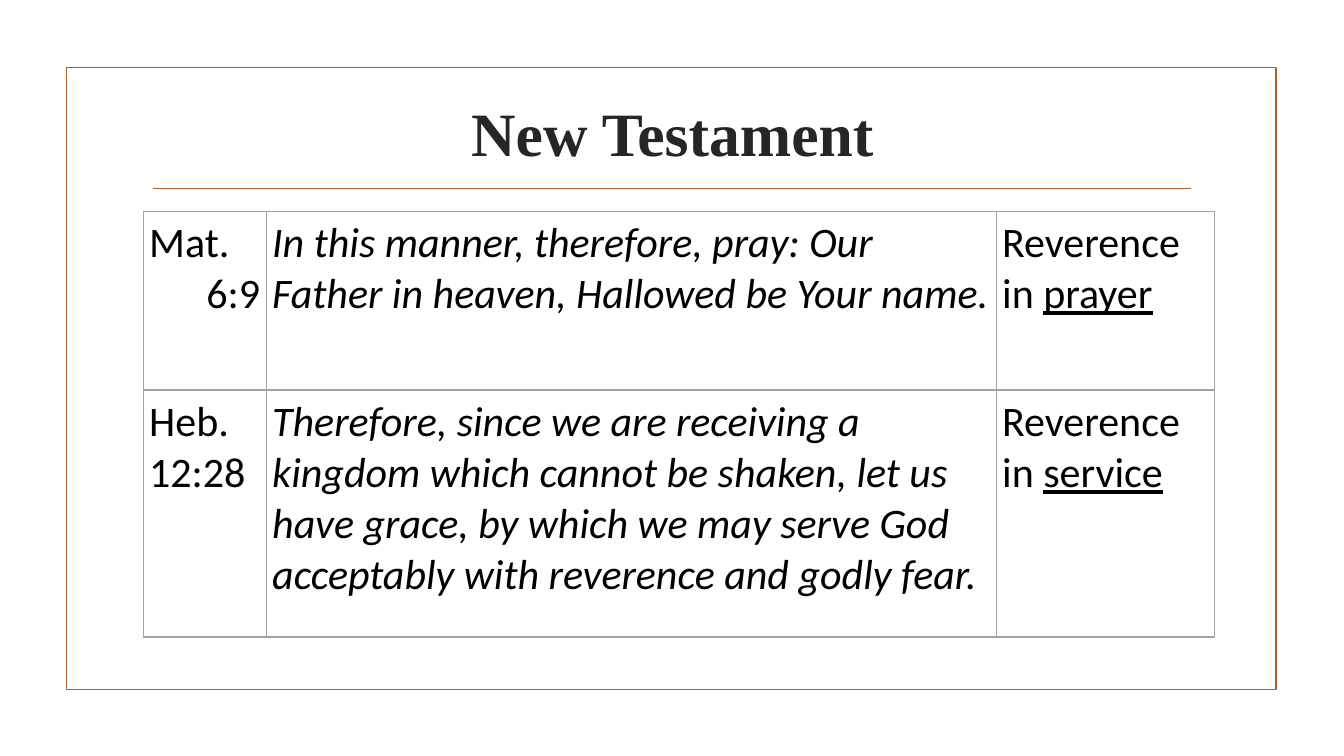
from dataclasses import dataclass

from lxml.etree import SubElement
from pptx import Presentation
from pptx.dml.color import RGBColor
from pptx.enum.shapes import MSO_CONNECTOR as Connector, MSO_SHAPE as Shape
from pptx.enum.text import MSO_ANCHOR as Anchor, PP_ALIGN as Align
from pptx.oxml.ns import qn
from pptx.util import Inches, Pt


@dataclass(frozen=True)
class Theme:
    accent: str = "B15E28"
    heading: str = "262626"
    ink: str = "000000"
    grid: str = "A3A3A3"
    heading_font: str = "Times New Roman"
    body_font: str = "Calibri"
    heading_size: float = 44
    body_size: float = 30
    rule_width: float = 1.25
    grid_width: float = 1
    cell_inset: float = 0.06


class VerseSlide:
    def __init__(self, slide, theme):
        self.shapes = slide.shapes
        self.theme = theme

    def stroke(self, line):
        line.color.rgb = RGBColor.from_string(self.theme.accent)
        line.width = Pt(self.theme.rule_width)

    def add_text(self, paragraph, text, color, **formats):
        run = paragraph.add_run()
        run.text = text
        for name, value in formats.items():
            setattr(run.font, name, value)
        run.font.color.rgb = RGBColor.from_string(color)

    def frame(self, left, top, width, height):
        border = self.shapes.add_shape(
            Shape.RECTANGLE, *map(Inches, (left, top, width, height)))
        border.shadow.inherit = False
        border.fill.background()
        self.stroke(border.line)

    def rule(self, left, right, y):
        divider = self.shapes.add_connector(
            Connector.STRAIGHT, *map(Inches, (left, y, right, y)))
        self.stroke(divider.line)
        SubElement(divider.element.spPr, qn("a:effectLst"))

    def title(self, text, left, top, width, height):
        heading = self.shapes.add_textbox(
            *map(Inches, (left, top, width, height))).text_frame
        heading.word_wrap = True
        heading.vertical_anchor = Anchor.MIDDLE
        heading.paragraphs[0].alignment = Align.CENTER
        self.add_text(heading.paragraphs[0], text, self.theme.heading, bold=True,
                      name=self.theme.heading_font, size=Pt(self.theme.heading_size))

    def outline(self, cell):
        properties = cell._tc.get_or_add_tcPr()
        for side in ("lnL", "lnR", "lnT", "lnB"):
            edge = SubElement(properties, qn(f"a:{side}"),
                              w=str(Pt(self.theme.grid_width)))
            fill = SubElement(edge, qn("a:solidFill"))
            SubElement(fill, qn("a:srgbClr"), val=self.theme.grid)

    def fill_cell(self, cell, paragraphs):
        for side in ("left", "right", "top", "bottom"):
            setattr(cell, f"margin_{side}", Inches(self.theme.cell_inset))
        self.outline(cell)
        cell.fill.background()
        body = cell.text_frame
        for index, (alignment, runs) in enumerate(paragraphs):
            paragraph = body.add_paragraph() if index else body.paragraphs[0]
            paragraph.alignment = alignment
            for text, formats in runs:
                self.add_text(paragraph, text, self.theme.ink,
                              name=self.theme.body_font,
                              size=Pt(self.theme.body_size), **formats)

    def table(self, rows, left, top, widths, heights):
        verses = self.shapes.add_table(
            len(heights), len(widths),
            *map(Inches, (left, top, sum(widths), sum(heights)))).table
        verses.first_row = verses.horz_banding = False
        for column, width in zip(verses.columns, widths):
            column.width = Inches(width)
        for row, height, contents in zip(verses.rows, heights, rows):
            row.height = Inches(height)
            for cell, paragraphs in zip(row.cells, contents):
                self.fill_cell(cell, paragraphs)


def verse_row(reference, verse, setting):
    """Reference lines, quoted verse, and where reverence is shown."""
    return (
        [(alignment, [(text, {})]) for alignment, text in reference],
        [(Align.LEFT, [(verse, {"italic": True})])],
        [(Align.LEFT, [("Reverence in ", {}), (setting, {"underline": True})])],
    )


VERSES = [
    verse_row([(Align.LEFT, "Mat."), (Align.RIGHT, "6:9")],
              "In this manner, therefore, pray: Our Father in heaven, "
              "Hallowed be Your name.", "prayer"),
    verse_row([(Align.LEFT, "Heb. 12:28")],
              "Therefore, since we are receiving a kingdom which cannot be shaken, "
              "let us have grace, by which we may serve God acceptably with "
              "reverence and godly fear.", "service"),
]


def main():
    deck = Presentation()
    deck.slide_width, deck.slide_height = Inches(13.33), Inches(7.5)
    page = VerseSlide(deck.slides.add_slide(deck.slide_layouts[6]), Theme())

    # Frame and heading
    page.frame(0.66, 0.67, 12, 6.17)
    page.rule(1.52, 11.81, 1.87)
    page.title("New Testament", 1.42, 0.83, 10.5, 0.96)

    # Verses
    page.table(VERSES, 1.42, 2.1, widths=(1.22, 7.24, 2.17), heights=(1.77, 2.45))

    deck.save("out.pptx")


if __name__ == "__main__":
    main()
